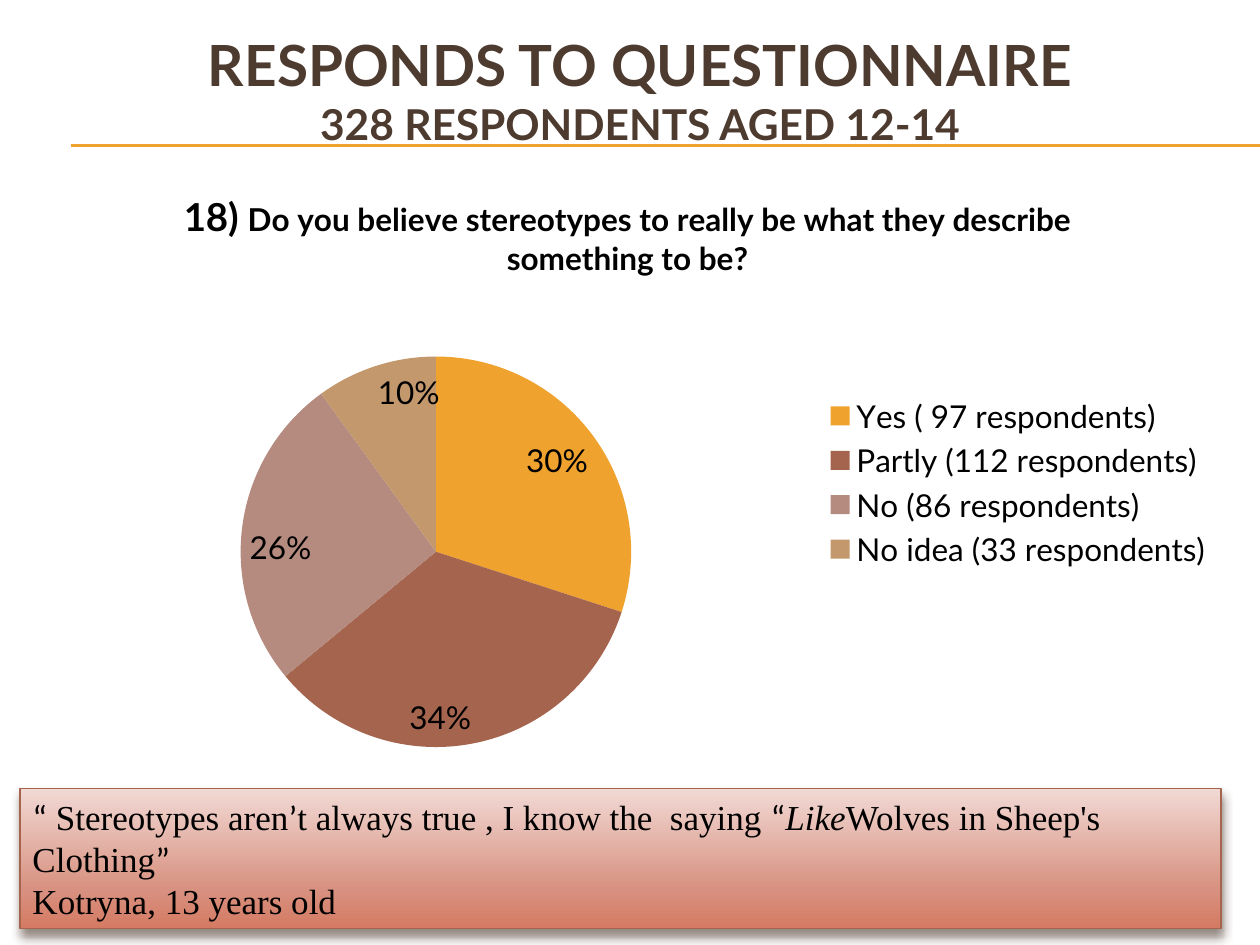
from copy import deepcopy
from dataclasses import dataclass

from lxml.etree import SubElement
from pptx import Presentation
from pptx.chart.data import CategoryChartData
from pptx.dml.color import RGBColor
from pptx.enum.chart import XL_CHART_TYPE, XL_LABEL_POSITION, XL_LEGEND_POSITION
from pptx.enum.shapes import MSO_CONNECTOR, MSO_SHAPE
from pptx.enum.text import MSO_ANCHOR, MSO_AUTO_SIZE, PP_ALIGN
from pptx.oxml import parse_xml
from pptx.oxml.ns import nsdecls, qn
from pptx.util import Inches, Pt


@dataclass(frozen=True)
class Theme:
    heading: str = "Lato"
    serif: str = "Times New Roman"
    quote_mark: str = "Calibri"
    brown: str = "4E3B30"
    black: str = "000000"
    gold: str = "F0A22E"
    rust: str = "A5644E"
    slices: tuple = ("F0A22E", "A5644E", "B58B80", "C3986D")
    gradient: tuple = ((0, "F1D9D4"), (0.72, "D89180"), (1, "D47A62"))
    title_size: float = 32.4
    subtitle_size: float = 24.3
    number_size: float = 22
    chart_size: float = 18
    quote_size: float = 20


THEME = Theme()


def rgb(value):
    return RGBColor.from_string(value)


def set_attrs(obj, **values):
    for name, value in values.items():
        setattr(obj, name, value)


def set_font(font, name, size, color, **values):
    set_attrs(font, name=name, size=Pt(size), **values)
    font.color.rgb = rgb(color)


def add_run(p, text, *args, **values):
    r = p.add_run()
    r.text = text
    set_font(r.font, *args, **values)


def add_heading(s, box):
    sp = s.shapes.title
    set_attrs(sp, **dict(zip(("left", "top", "width", "height"), box)))
    tf = sp.text_frame
    set_attrs(tf, word_wrap=True, auto_size=MSO_AUTO_SIZE.NONE,
              vertical_anchor=MSO_ANCHOR.MIDDLE, margin_bottom=Inches(0.55))
    p = tf.paragraphs[0]
    p.alignment = PP_ALIGN.CENTER
    add_run(p, "RESPONDS TO QUESTIONNAIRE", THEME.heading, THEME.title_size,
            THEME.brown, bold=True)
    p.add_line_break()
    add_run(p, "328 RESPONDENTS AGED 12-14", THEME.heading, THEME.subtitle_size,
            THEME.brown, bold=True)


def add_rules(s, left, right, tops):
    for top in tops:
        c = s.shapes.add_connector(MSO_CONNECTOR.STRAIGHT, left, top, right, top)
        c.line.color.rgb = rgb(THEME.gold)
        c.line.width = Pt(0.75)
        SubElement(c._element.spPr, qn("a:effectLst"))


def set_plot_layout(chart, **fractions):
    area = chart._chartSpace.chart.plotArea
    old = area.find(qn("c:layout"))
    if old is not None:
        area.remove(old)
    parts = [("layoutTarget", "inner"), ("xMode", "edge"), ("yMode", "edge"),
             *fractions.items()]
    body = "".join(f'<c:{tag} val="{val}"/>' for tag, val in parts)
    area.insert(0, parse_xml(f'<c:layout {nsdecls("c")}><c:manualLayout>{body}'
                             "</c:manualLayout></c:layout>"))


def add_answers_chart(s, box):
    data = CategoryChartData()
    data.categories = ["Yes ( 97 respondents)", "Partly (112 respondents)",
                       "No (86 respondents)", "No idea (33 respondents)"]
    data.add_series("Series 1", (30, 34, 26, 10))
    chart = s.shapes.add_chart(XL_CHART_TYPE.PIE, *box, data).chart
    set_font(chart.font, THEME.heading, THEME.chart_size, THEME.black)

    chart.has_title = True
    p = chart.chart_title.text_frame.paragraphs[0]
    for text, size in (("18) ", THEME.number_size),
                       ("Do you believe stereotypes to really be what they describe "
                        "something to be?", THEME.chart_size)):
        add_run(p, text, THEME.heading, size, THEME.black, bold=True)

    chart.has_legend = True
    set_attrs(chart.legend, position=XL_LEGEND_POSITION.RIGHT, include_in_layout=False)
    set_plot_layout(chart, x=0.06, y=0.3, w=0.56, h=0.62)

    plot = chart.plots[0]
    set_attrs(plot, vary_by_categories=True, has_data_labels=True)
    labels = plot.data_labels
    set_attrs(labels, show_percentage=True, show_value=False, number_format="0%",
              number_format_is_linked=False, position=XL_LABEL_POSITION.INSIDE_END)
    set_font(labels.font, THEME.heading, THEME.chart_size, THEME.black)
    for i, color in enumerate(THEME.slices):
        fill = plot.series[0].points[i].format.fill
        fill.solid()
        fill.fore_color.rgb = rgb(color)


def fill_gradient(sp):
    sp.fill.gradient()
    sp.fill.gradient_angle = 270
    stops = sp._element.spPr.find(".//" + qn("a:gsLst"))
    stops.append(deepcopy(stops[-1]))
    for stop, (position, color) in zip(sp.fill.gradient_stops, THEME.gradient):
        stop.position = position
        stop.color.rgb = rgb(color)


def add_shadow(sp):
    sp.shadow.inherit = False
    sp._element.spPr.find(qn("a:effectLst")).append(parse_xml(
        f'<a:outerShdw {nsdecls("a")} blurRad="{Pt(6)}" dist="{Pt(4)}" dir="5400000" '
        f'rotWithShape="0"><a:srgbClr val="{THEME.brown}"><a:alpha val="60000"/>'
        "</a:srgbClr></a:outerShdw>"))


def add_quote(s, box):
    sp = s.shapes.add_shape(MSO_SHAPE.RECTANGLE, *box)
    fill_gradient(sp)
    sp.line.color.rgb = rgb(THEME.rust)
    sp.line.width = Pt(0.79)
    add_shadow(sp)
    tf = sp.text_frame
    set_attrs(tf, word_wrap=True, vertical_anchor=MSO_ANCHOR.MIDDLE,
              auto_size=MSO_AUTO_SIZE.SHAPE_TO_FIT_TEXT)
    mark, serif = THEME.quote_mark, THEME.serif
    quote = [("“", mark, False), (" Stereotypes aren", serif, False),
             ("’", mark, False), ("t always true , I know the  saying ", serif, False),
             ("“", mark, False), ("Like", serif, True),
             ("Wolves in Sheep's Clothing", serif, False), ("”", mark, False)]
    author = [("Kotryna, 13 years old", serif, False)]
    for p, runs in ((tf.paragraphs[0], quote), (tf.add_paragraph(), author)):
        p.alignment = PP_ALIGN.LEFT
        for text, name, italic in runs:
            add_run(p, text, name, THEME.quote_size, THEME.black, italic=italic)


def inches(*values):
    return [Inches(v) for v in values]


def main():
    prs = Presentation()
    set_attrs(prs, slide_width=Inches(10), slide_height=Inches(7.5))
    s = prs.slides.add_slide(prs.slide_layouts[5])
    add_rules(s, Inches(0.56), prs.slide_width, inches(1.15, 1.16))
    add_heading(s, inches(0.33, 0.5, 9.5, 0.92))
    add_answers_chart(s, inches(0.23, 1.33, 9.5, 5))
    add_quote(s, inches(0.16, 6.26, 9.53, 1.11))
    prs.save("out.pptx")


if __name__ == "__main__":
    main()
